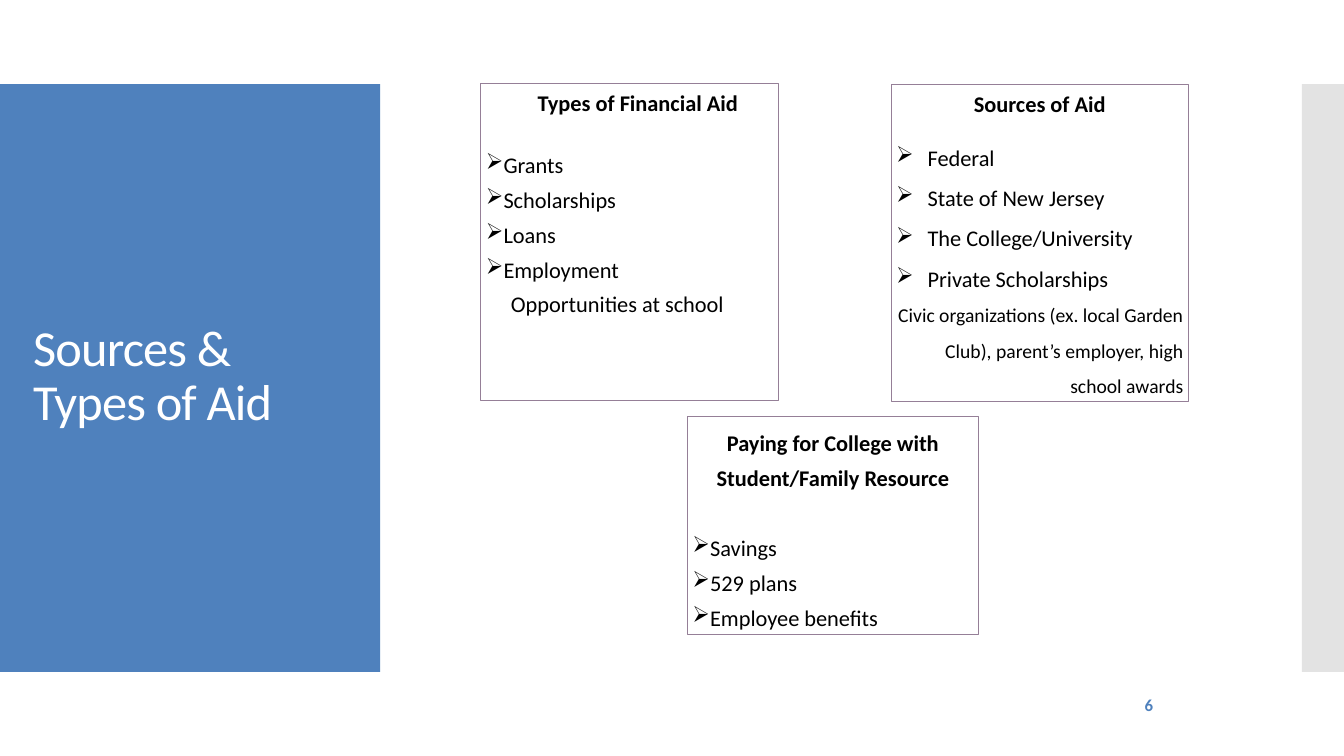
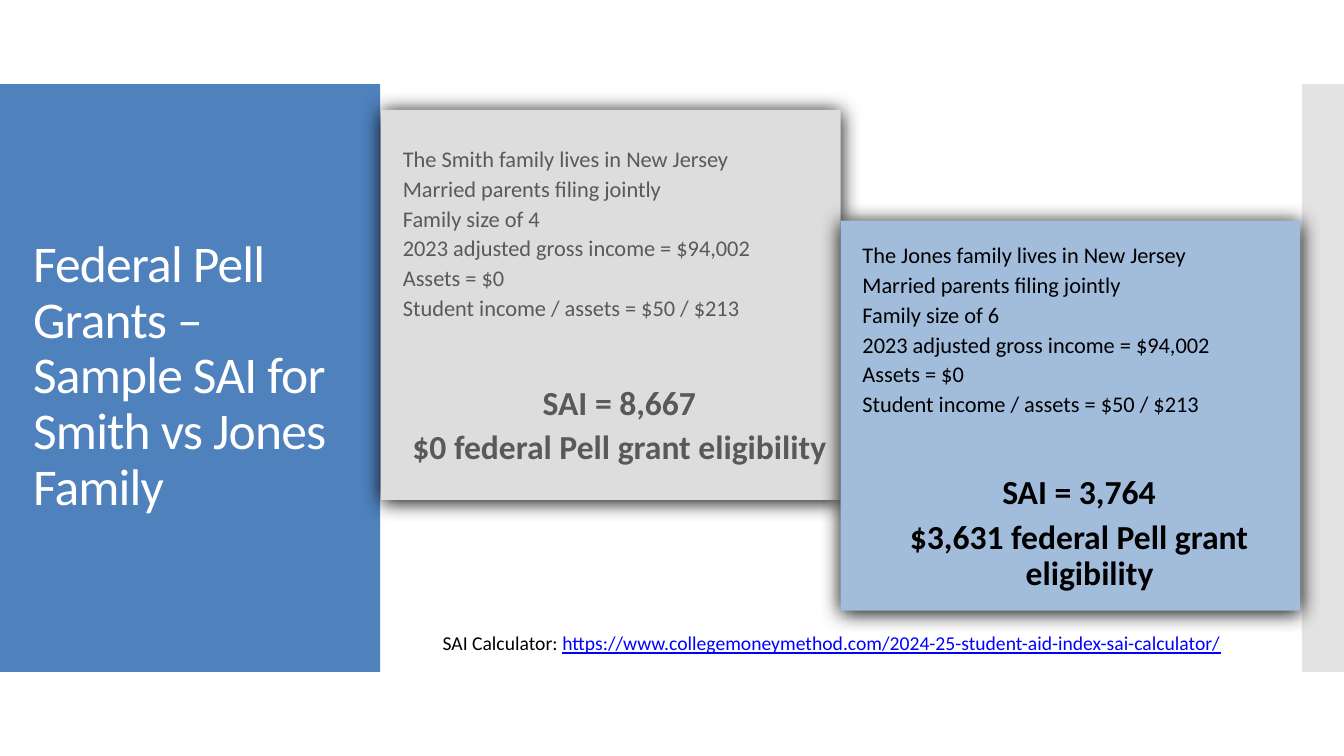
from dataclasses import dataclass, replace

import lxml.etree
import pptx
import pptx.dml.color
import pptx.enum.shapes
import pptx.enum.text
import pptx.oxml.ns
import pptx.util

Pt = pptx.util.Pt
qn = pptx.oxml.ns.qn
ALIGN = pptx.enum.text.PP_ALIGN
ANCHOR = pptx.enum.text.MSO_ANCHOR

FONT = "Calibri"
INSET = 3.6
TITLE_ONLY = 5
COLORS = {
    "blue": "4F81BD",
    "band_gray": "C8C8C8",
    "outline": "957F97",
    "card_gray": "DDDDDD",
    "card_blue": "A2BCDC",
    "text_gray": "595959",
    "black": "000000",
    "white": "FFFFFF",
    "link": "0000FF",
}


@dataclass(frozen=True)
class Area:
    left: float
    top: float
    width: float
    height: float


@dataclass(frozen=True)
class Line:
    text: str
    size: float = 16
    bold: bool = False
    align: ALIGN = ALIGN.LEFT
    spacing: float = 1.0
    before: float = 0
    margin: float = 0
    indent: float = 0
    bullet: bool = False


@dataclass(frozen=True)
class AidBox:
    area: Area
    lines: list[Line]


@dataclass(frozen=True)
class FamilyCard:
    area: Area
    fill: str
    text_color: str
    name: str
    size: int
    gap: float
    index: str
    grant: str


def rgb(name: str) -> pptx.dml.color.RGBColor:
    return pptx.dml.color.RGBColor.from_string(COLORS[name])


# Shared drawing functions
def add_rectangle(slide, area: Area, fill: str | None = None, line: str | None = None):
    shape = slide.shapes.add_shape(
        pptx.enum.shapes.MSO_SHAPE.RECTANGLE,
        Pt(area.left), Pt(area.top), Pt(area.width), Pt(area.height))
    shape.shadow.inherit = False
    if fill:
        shape.fill.solid()
        shape.fill.fore_color.rgb = rgb(fill)
    else:
        shape.fill.background()
    if line:
        shape.line.color.rgb = rgb(line)
        shape.line.width = Pt(0.75)
    else:
        shape.line.fill.background()
    return shape


def prepare_frame(shape, anchor: ANCHOR):
    frame = shape.text_frame
    frame.word_wrap = True
    frame.auto_size = pptx.enum.text.MSO_AUTO_SIZE.NONE
    frame.vertical_anchor = anchor
    frame.margin_left = frame.margin_right = Pt(INSET)
    frame.margin_top = frame.margin_bottom = Pt(INSET)
    return frame


def add_run(paragraph, text: str, size: float, color: str, bold: bool = False):
    run = paragraph.add_run()
    run.text = text
    run.font.name = FONT
    run.font.size = Pt(size)
    run.font.bold = bold
    run.font.color.rgb = rgb(color)
    return run


def write_lines(frame, lines: list[Line], color: str) -> None:
    for number, line in enumerate(lines):
        paragraph = frame.add_paragraph() if number else frame.paragraphs[0]
        properties = paragraph._p.get_or_add_pPr()
        properties.set("marL", str(int(Pt(line.margin))))
        properties.set("indent", str(int(Pt(line.indent))))
        if line.bullet:
            lxml.etree.SubElement(properties, qn("a:buChar")).set("char", "➢")
        paragraph.alignment = line.align
        paragraph.line_spacing = line.spacing
        paragraph.space_before = Pt(line.before)
        add_run(paragraph, line.text, line.size, color, line.bold)


def add_base_slide(presentation, title_lines: list[str], title_width: float, title_size: float):
    slide = presentation.slides.add_slide(presentation.slide_layouts[TITLE_ONLY])
    title = slide.shapes.title

    # Side bands, behind the title
    left_band = add_rectangle(slide, Area(0, 60, 271.5, 420), "blue")
    right_band = add_rectangle(slide, Area(930, 60, 30, 420), "band_gray")
    band_color = right_band.fill._xPr.find(qn("a:solidFill"))[0]
    lxml.etree.SubElement(band_color, qn("a:alpha")).set("val", "50000")
    for band in (left_band, right_band):
        title.element.addprevious(band.element)

    # Title
    title.left, title.top = Pt(20), Pt(88.5)
    title.width, title.height = Pt(title_width), Pt(362)
    paragraph = prepare_frame(title, ANCHOR.MIDDLE).paragraphs[0]
    paragraph.alignment = ALIGN.LEFT
    paragraph.line_spacing = 0.9
    for number, text in enumerate(title_lines):
        if number:
            paragraph.add_line_break()
        run = add_run(paragraph, text, title_size, "white")
        run._r.get_or_add_rPr().set("spc", "-60")
    return slide


# Slide: sources and types of aid
def bullets(texts: list[str], spacing: float, first: Line, hang: float = 0) -> list[Line]:
    item = Line("", spacing=spacing, margin=hang, indent=-hang, bullet=True)
    return [replace(item, text=text) if number else
            replace(item, text=text, spacing=first.spacing, before=first.before)
            for number, text in enumerate(texts)]


def build_aid_slide(presentation) -> None:
    slide = add_base_slide(presentation, ["Sources & Types of Aid"], 232, 36)
    heading = Line("", bold=True, align=ALIGN.CENTER)
    boxes = [
        AidBox(Area(636.5, 60.5, 212.4, 226), [
            replace(heading, text="Sources of Aid"),
            *bullets(["Federal", "State of New Jersey", "The College/University",
                      "Private Scholarships"], 1.5, Line("", before=19.5), 22.5),
            Line("Civic organizations (ex. local Garden Club), parent’s employer, "
                 "high school awards", size=14, align=ALIGN.RIGHT, spacing=1.5),
        ]),
        AidBox(Area(343.4, 59.8, 212.4, 226), [
            replace(heading, text="Types of Financial Aid", indent=12),
            *bullets(["Grants", "Scholarships", "Loans", "Employment"], 1.3,
                     Line("", spacing=1.3, before=19.5)),
            Line("Opportunities at school", spacing=1.3, margin=18),
        ]),
        AidBox(Area(491, 297.4, 208, 156.2), [
            replace(heading, text="Paying for College with Student/Family Resource",
                    spacing=1.3),
            *bullets(["Savings", "529 plans", "Employee benefits"], 1.3,
                     Line("", spacing=1.3, before=25)),
        ]),
    ]
    for box in boxes:
        shape = add_rectangle(slide, box.area, line="outline")
        write_lines(prepare_frame(shape, ANCHOR.TOP), box.lines, "black")

    # Slide number
    number_box = slide.shapes.add_textbox(Pt(805), Pt(492.5), Pt(22.3), Pt(21.6))
    frame = prepare_frame(number_box, ANCHOR.MIDDLE)
    frame.word_wrap = False
    write_lines(frame, [Line("6", size=12, bold=True, align=ALIGN.RIGHT)], "blue")


# Slide: two families compared
def add_shadow(shape) -> None:
    effects = shape.element.spPr.find(qn("a:effectLst"))
    shadow = lxml.etree.SubElement(effects, qn("a:outerShdw"))
    shadow.set("blurRad", str(int(Pt(15))))
    shadow.set("dist", str(int(Pt(1))))
    shadow.set("dir", "5400000")
    lxml.etree.SubElement(shadow, qn("a:srgbClr")).set("val", COLORS["black"])


def add_family_card(slide, card: FamilyCard) -> None:
    shape = add_rectangle(slide, card.area, card.fill)
    add_shadow(shape)
    facts = [
        f"The {card.name} family lives in New Jersey",
        "Married parents filing jointly",
        f"Family size of {card.size}",
        "2023 adjusted gross income = $94,002",
        "Assets = $0",
        "Student income / assets = $50 / $213",
    ]
    result = Line("", size=24, bold=True, align=ALIGN.CENTER, spacing=0.9,
                  before=6, margin=27.4, indent=-15.1)
    lines = [Line(fact, spacing=0.9, before=4 if number else 0, indent=12)
             for number, fact in enumerate(facts)]
    lines.append(replace(result, text=f"SAI = {card.index}", before=card.gap))
    lines.append(replace(result, text=f"{card.grant} federal Pell grant eligibility"))
    frame = prepare_frame(shape, ANCHOR.MIDDLE)
    frame.margin_top = Pt(INSET + 4)
    write_lines(frame, lines, card.text_color)


def build_family_slide(presentation) -> None:
    slide = add_base_slide(
        presentation,
        ["Federal Pell Grants – ", "Sample SAI for ", "Smith vs Jones Family"], 245.5, 36.8)
    smith = FamilyCard(Area(272.2, 78.5, 328.3, 278.6), "card_gray", "text_gray",
                       "Smith", 4, 46.5, "8,667", "$0")
    jones = FamilyCard(Area(600.5, 157.7, 328.3, 278.6), "card_blue", "black",
                       "Jones", 6, 41.5, "3,764", "$3,631")
    add_family_card(slide, smith)

    # Calculator address
    address_box = add_rectangle(slide, Area(312.5, 447.1, 594, 24.5), "white")
    frame = prepare_frame(address_box, ANCHOR.TOP)
    write_lines(frame, [Line("SAI Calculator: ", size=14)], "black")
    address = add_run(
        frame.paragraphs[0],
        "https://www.collegemoneymethod.com/2024-25-student-aid-index-sai-calculator/",
        14, "link")
    address.font.underline = True

    add_family_card(slide, jones)


def main() -> None:
    presentation = pptx.Presentation()
    presentation.slide_width = Pt(960)
    presentation.slide_height = Pt(540)
    build_aid_slide(presentation)
    build_family_slide(presentation)
    presentation.save("out.pptx")


if __name__ == "__main__":
    main()
